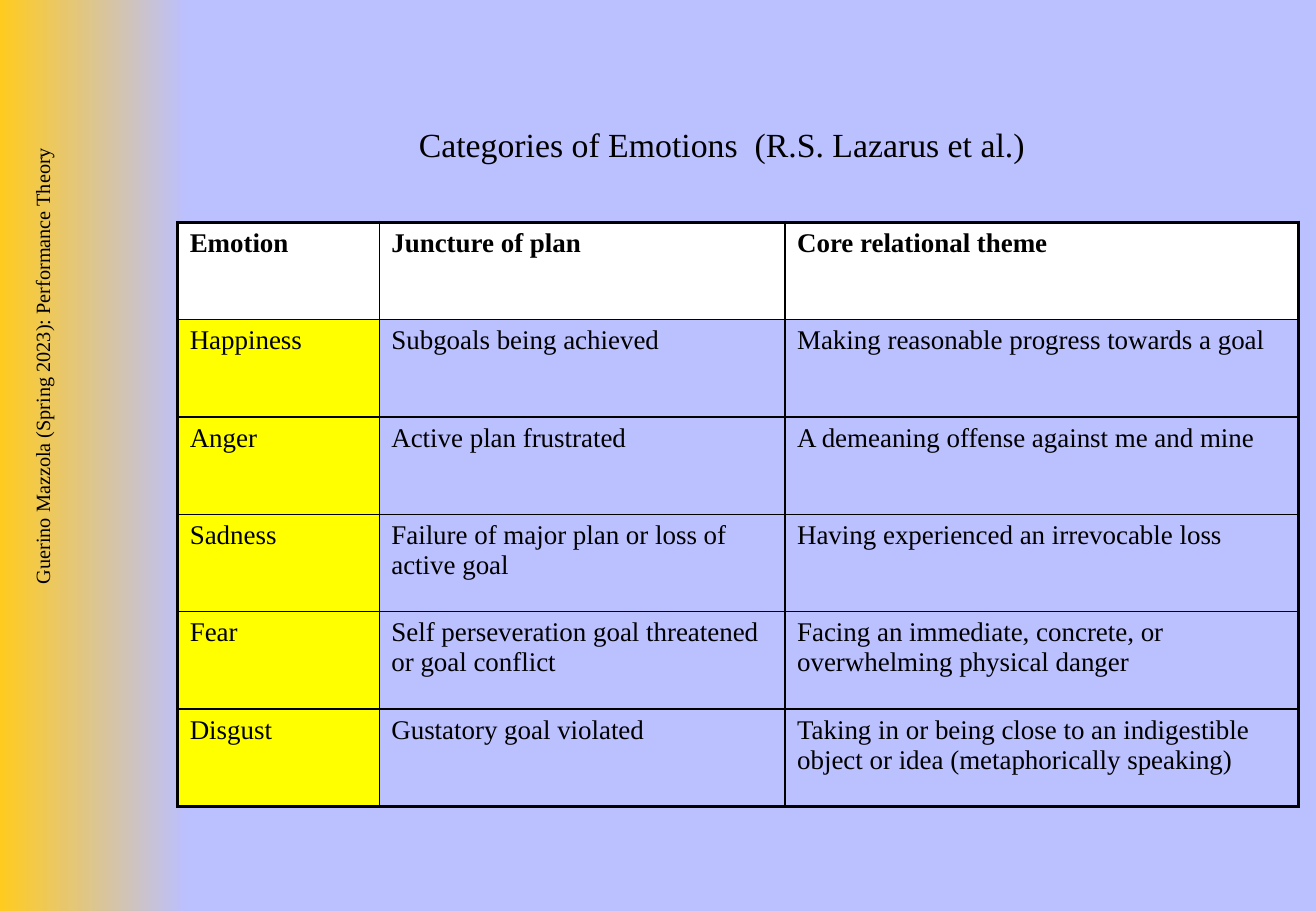
from lxml.etree import SubElement
from pptx import Presentation
from pptx.dml.color import RGBColor
from pptx.enum.shapes import MSO_SHAPE as Shape
from pptx.enum.text import MSO_ANCHOR as Anchor, PP_ALIGN as Align
from pptx.oxml.ns import qn
from pptx.util import Pt

FONT = "Times New Roman"
BLACK, WHITE, YELLOW = "000000", "FFFFFF", "FFFF00"
LAVENDER, GOLD = "BBC0FF", "FFCB1F"
THICK, THIN = 2.25, 1
COLUMN_WIDTHS = [119.5, 240.5, 304.5]
ROW_HEIGHT = 57.7
ROWS = [
    ["Emotion", "Juncture of plan", "Core relational theme"],
    ["Happiness", "Subgoals being achieved", "Making reasonable progress towards a goal"],
    ["Anger", "Active plan frustrated", "A demeaning offense against me and mine"],
    ["Sadness", "Failure of major plan or loss of active goal",
     "Having experienced an irrevocable loss"],
    ["Fear", "Self perseveration goal threatened or goal conflict",
     "Facing an immediate, concrete, or overwhelming physical danger"],
    ["Disgust", "Gustatory goal violated",
     "Taking in or being close to an indigestible object or idea (metaphorically speaking)"],
]


def color(value):
    return RGBColor.from_string(value)


def write(frame, text, size, align=Align.LEFT, bold=False):
    paragraph = frame.paragraphs[0]
    paragraph.alignment = align
    run = paragraph.add_run()
    run.text = text
    run.font.name = FONT
    run.font.size = Pt(size)
    run.font.bold = bold
    run.font.color.rgb = color(BLACK)


presentation = Presentation()
presentation.slide_width = Pt(780)
presentation.slide_height = Pt(540)
slide = presentation.slides.add_slide(presentation.slide_layouts[5])
slide.background.fill.solid()
slide.background.fill.fore_color.rgb = color(LAVENDER)

# Side band
band = slide.shapes.add_shape(Shape.RECTANGLE, Pt(0), Pt(0), Pt(111), Pt(540))
band.shadow.inherit = False
band.line.fill.background()
band.fill.gradient()
band.fill.gradient_angle = 0
for stop, position, value in zip(band.fill.gradient_stops, [0, 1], [GOLD, LAVENDER]):
    stop.position = position
    stop.color.rgb = color(value)

# Title and rotated course label
title = slide.shapes.title
title.left, title.top, title.width, title.height = Pt(208), Pt(70), Pt(440), Pt(31)
label = slide.shapes.add_textbox(Pt(-115), Pt(208), Pt(280), Pt(18))
label.rotation = 270
for box, text, size in [
    (title, "Categories of Emotions  (R.S. Lazarus et al.)", 20),
    (label, "Guerino Mazzola (Spring 2023): Performance Theory", 12),
]:
    frame = box.text_frame
    frame.word_wrap = True
    frame.vertical_anchor = Anchor.MIDDLE
    frame.margin_left = frame.margin_right = frame.margin_top = frame.margin_bottom = 0
    write(frame, text, size, Align.CENTER)

# Table of emotions
last_row, last_column = len(ROWS) - 1, len(COLUMN_WIDTHS) - 1
table = slide.shapes.add_table(
    len(ROWS), len(COLUMN_WIDTHS), Pt(105.3), Pt(131.8),
    Pt(sum(COLUMN_WIDTHS)), Pt(ROW_HEIGHT * len(ROWS))).table
table.first_row = table.horz_banding = False
for column, width in zip(table.columns, COLUMN_WIDTHS):
    column.width = Pt(width)
for row_index, texts in enumerate(ROWS):
    table.rows[row_index].height = Pt(ROW_HEIGHT)
    for column_index, text in enumerate(texts):
        cell = table.cell(row_index, column_index)
        write(cell.text_frame, text, 16, bold=row_index == 0)
        outer_edges = {
            "a:lnL": column_index == 0,
            "a:lnR": column_index == last_column,
            "a:lnT": row_index == 0,
            "a:lnB": row_index == last_row,
        }
        properties = cell._tc.get_or_add_tcPr()
        for tag, is_outer in outer_edges.items():
            border = SubElement(properties, qn(tag), w=str(Pt(THICK if is_outer else THIN)))
            fill = SubElement(border, qn("a:solidFill"))
            SubElement(fill, qn("a:srgbClr"), val=BLACK)
        if row_index == 0 or column_index == 0:
            cell.fill.solid()
            cell.fill.fore_color.rgb = color(WHITE if row_index == 0 else YELLOW)
        else:
            cell.fill.background()

presentation.save("out.pptx")
